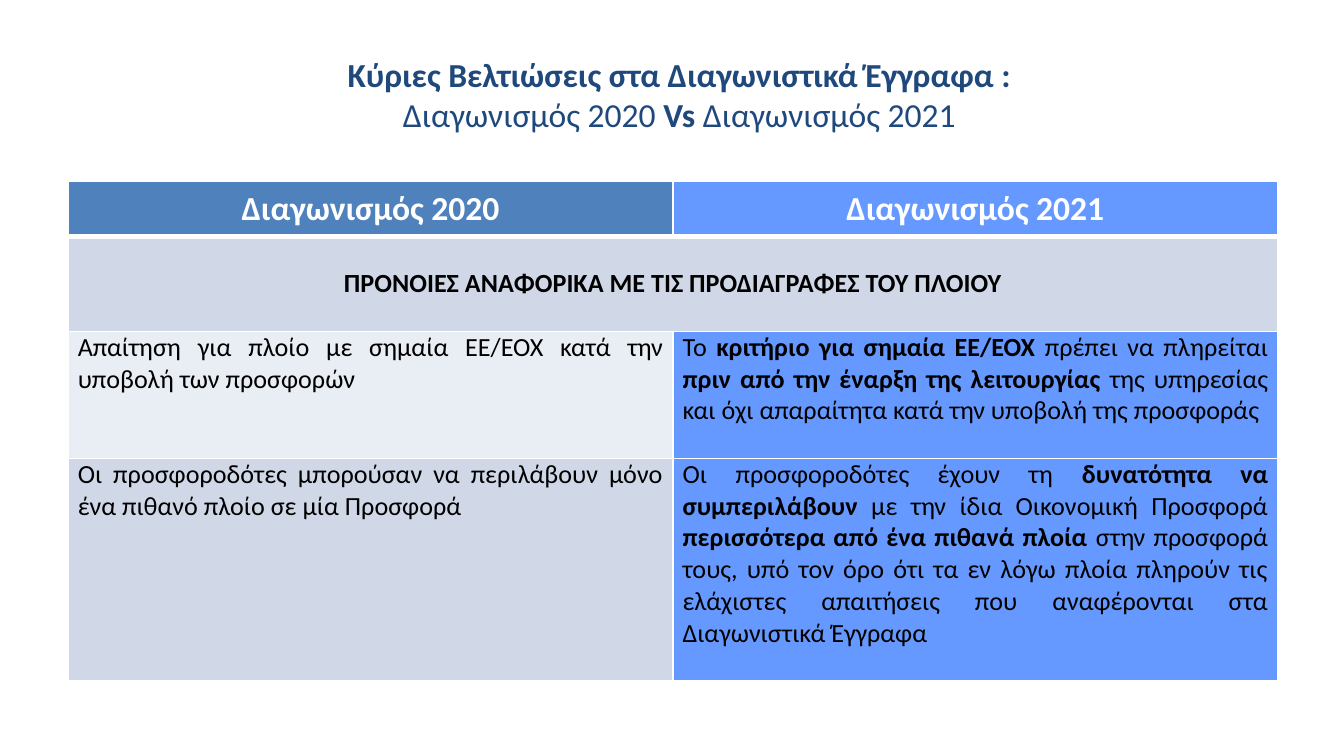
"""Build the slide comparing the 2020 and 2021 tenders."""
from lxml import etree
from pptx import Presentation
from pptx.dml.color import RGBColor
from pptx.enum.text import MSO_ANCHOR, MSO_AUTO_SIZE, PP_ALIGN
from pptx.oxml.ns import qn
from pptx.util import Cm, Pt

CENTER, JUSTIFY = PP_ALIGN.CENTER, PP_ALIGN.JUSTIFY
TOP, MIDDLE = MSO_ANCHOR.TOP, MSO_ANCHOR.MIDDLE
NO_FIT = MSO_AUTO_SIZE.NONE

FONT = "Calibri"
WHITE = RGBColor(0xFF, 0xFF, 0xFF)
BLACK = RGBColor(0x00, 0x00, 0x00)
NAVY = RGBColor(0x1F, 0x49, 0x7D)
STEEL = RGBColor(0x4F, 0x81, 0xBD)
BLUE = RGBColor(0x66, 0x99, 0xFF)
BAND_DARK = RGBColor(0xD0, 0xD8, 0xE8)
BAND_LIGHT = RGBColor(0xE9, 0xED, 0xF4)

TITLE = ("*Κύριες Βελτιώσεις στα Διαγωνιστικά Έγγραφα :*\n"
         "Διαγωνισμός 2020 *Vs *Διαγωνισμός 2021")
HEADERS = [("*Διαγωνισμός 2020*", STEEL), ("*Διαγωνισμός 2021*", BLUE)]
SECTION = "*ΠΡΟΝΟΙΕΣ ΑΝΑΦΟΡΙΚΑ ΜΕ ΤΙΣ ΠΡΟΔΙΑΓΡΑΦΕΣ ΤΟΥ ΠΛΟΙΟΥ*"
COMPARISONS = [
    ("Απαίτηση για πλοίο με σημαία ΕΕ/ΕΟΧ κατά την υποβολή των προσφορών",
     "Το *κριτήριο για σημαία ΕΕ/ΕΟΧ *πρέπει να πληρείται *πριν από την έναρξη "
     "της λειτουργίας* της υπηρεσίας και όχι απαραίτητα κατά την υποβολή της "
     "προσφοράς",
     BAND_LIGHT),
    ("Οι προσφοροδότες μπορούσαν να περιλάβουν μόνο ένα πιθανό πλοίο σε μία "
     "Προσφορά",
     "Οι προσφοροδότες έχουν τη *δυνατότητα να συμπεριλάβουν* με την ίδια "
     "Οικονομική Προσφορά *περισσότερα από ένα πιθανά πλοία *στην προσφορά "
     "τους, υπό τον όρο ότι τα εν λόγω πλοία πληρούν τις ελάχιστες απαιτήσεις "
     "που αναφέρονται στα Διαγωνιστικά Έγγραφα",
     BAND_DARK),
]
ROW_HEIGHTS = [1.02, 1.8, 2.4, 4.21]


def write(tf, text, size=14, color=BLACK, align=JUSTIFY):
    """Write text with *bold* marks and line breaks into a text frame."""
    p = tf.paragraphs[0]
    p.alignment = align
    for i, line in enumerate(text.split("\n")):
        if i:
            p.add_line_break()
        for j, part in enumerate(line.split("*")):
            if part:
                r = p.add_run()
                r.text = part
                r.font.name, r.font.size = FONT, Pt(size)
                r.font.bold = j % 2 == 1
                r.font.color.rgb = color


def set_borders(cell, bottom=1):
    """Give a cell white borders, in points."""
    tc_pr = cell._tc.get_or_add_tcPr()
    for side, width in (("L", 1), ("R", 1), ("T", 1), ("B", bottom)):
        ln = etree.SubElement(tc_pr, qn(f"a:ln{side}"), w=str(Pt(width)))
        fill = etree.SubElement(ln, qn("a:solidFill"))
        etree.SubElement(fill, qn("a:srgbClr"), val=str(WHITE))


def fill_cell(cell, text, fill, anchor=TOP, margin=0, bottom=1, **fmt):
    """Fill, frame and write one table cell."""
    set_borders(cell, bottom)
    cell.fill.solid()
    cell.fill.fore_color.rgb = fill
    cell.vertical_anchor = anchor
    cell.margin_left = cell.margin_right = Cm(0.18)
    cell.margin_top = cell.margin_bottom = Cm(margin)
    write(cell.text_frame, text, **fmt)


def add_title(s):
    """Place and write the slide title."""
    sp = s.shapes.title
    sp.left, sp.top, sp.width, sp.height = Cm(1.27), Cm(0.58), Cm(23.14), Cm(2.39)
    tf = sp.text_frame
    tf.auto_size = NO_FIT
    tf.vertical_anchor = MIDDLE
    write(tf, TITLE, size=18, color=NAVY, align=CENTER)


def add_comparison(s):
    """Add the table comparing both tenders."""
    table = s.shapes.add_table(len(ROW_HEIGHTS), 2, Cm(1.29), Cm(3.43),
                               Cm(22.86), Cm(sum(ROW_HEIGHTS))).table
    for row, height in zip(table.rows, ROW_HEIGHTS):
        row.height = Cm(height)
    for col, (text, fill) in enumerate(HEADERS):
        fill_cell(table.cell(0, col), text, fill, margin=0.13, bottom=3,
                  size=18, color=WHITE, align=CENTER)
    table.cell(1, 0).merge(table.cell(1, 1))
    fill_cell(table.cell(1, 0), SECTION, BAND_DARK, anchor=MIDDLE, align=CENTER)
    for row, (before, after, band) in enumerate(COMPARISONS, start=2):
        fill_cell(table.cell(row, 0), before, band)
        fill_cell(table.cell(row, 1), after, BLUE)


def main():
    """Build and save the presentation."""
    prs = Presentation()
    prs.slide_width, prs.slide_height = Cm(25.4), Cm(14.29)
    s = prs.slides.add_slide(prs.slide_layouts[5])
    add_title(s)
    add_comparison(s)
    prs.save("out.pptx")


if __name__ == "__main__":
    main()
